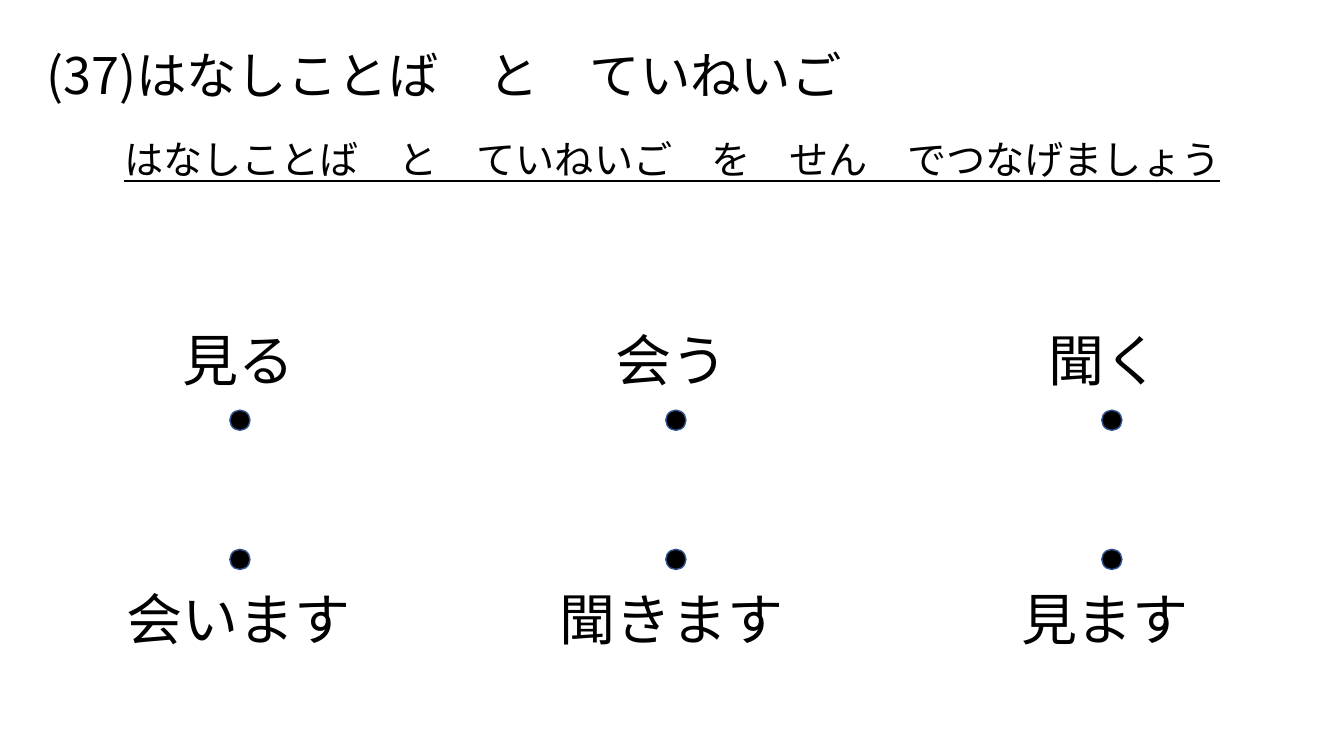
from dataclasses import dataclass

from lxml import etree
from pptx import Presentation
from pptx.dml.color import RGBColor
from pptx.enum.shapes import MSO_SHAPE
from pptx.enum.text import MSO_AUTO_SIZE, PP_ALIGN
from pptx.oxml.ns import qn
from pptx.util import Pt

DOT = MSO_SHAPE.FLOWCHART_CONNECTOR
FIT_SHAPE = MSO_AUTO_SIZE.SHAPE_TO_FIT_TEXT
LEFT, CENTER = PP_ALIGN.LEFT, PP_ALIGN.CENTER


@dataclass(frozen=True)
class Theme:
    font: str = "Noto Sans CJK JP"
    ink: RGBColor = RGBColor(0x00, 0x00, 0x00)
    dot_line: RGBColor = RGBColor(0x32, 0x54, 0x91)
    title: int = 36
    instruction: int = 28
    word: int = 40


class Worksheet:
    def __init__(self, prs, theme):
        self.theme = theme
        self.s = prs.slides.add_slide(prs.slide_layouts[6])

    def text(self, text, x, y, w, h, size, align=CENTER):
        box = self.s.shapes.add_textbox(Pt(x), Pt(y), Pt(w), Pt(h))
        tf = box.text_frame
        tf.word_wrap = True
        p = tf.paragraphs[0]
        p.text = text
        p.alignment = align
        p.font.size = Pt(size)
        p.font.name = self.theme.font
        p.font.color.rgb = self.theme.ink
        # Japanese glyphs take the East Asian typeface
        ea = etree.SubElement(p.font._element, qn("a:ea"))
        ea.set("typeface", self.theme.font)
        return tf

    def heading(self, text, x, y, w, h, size, align):
        p = self.text(text, x, y, w, h, size, align).paragraphs[0]
        p.line_spacing = 0.9
        p.space_before = Pt(10)
        return p

    def word(self, text, x, y):
        tf = self.text(text, x, y, 211.7, 55.4, self.theme.word)
        tf.auto_size = FIT_SHAPE

    def dot(self, x, y):
        sp = self.s.shapes.add_shape(DOT, Pt(x), Pt(y), Pt(14.4), Pt(14.4))
        sp.shadow.inherit = False
        sp.fill.solid()
        sp.fill.fore_color.rgb = self.theme.ink
        sp.line.color.rgb = self.theme.dot_line
        sp.line.width = Pt(1)


def main():
    prs = Presentation()
    prs.slide_width, prs.slide_height = Pt(960), Pt(540)
    theme = Theme()
    sheet = Worksheet(prs, theme)

    sheet.heading("(37)はなしことば　と　ていねいご",
                  25.9, 33.1, 615.6, 46.8, theme.title, LEFT)
    p = sheet.heading("はなしことば　と　ていねいご　を　せん　でつなげましょう",
                      75.6, 97.2, 809.3, 72, theme.instruction, CENTER)
    p.font.underline = True

    # words, top of the words, top of their dots
    rows = [
        (("見る", "会う", "聞く"), 229, 293),
        (("会います", "聞きます", "見ます"), 414, 392.4),
    ]
    for words, word_y, dot_y in rows:
        for col, word in enumerate(words):
            sheet.word(word, 64.8 + 309.3 * col, word_y)
            sheet.dot(164.2 + 311.4 * col, dot_y)

    prs.save("out.pptx")


if __name__ == "__main__":
    main()
